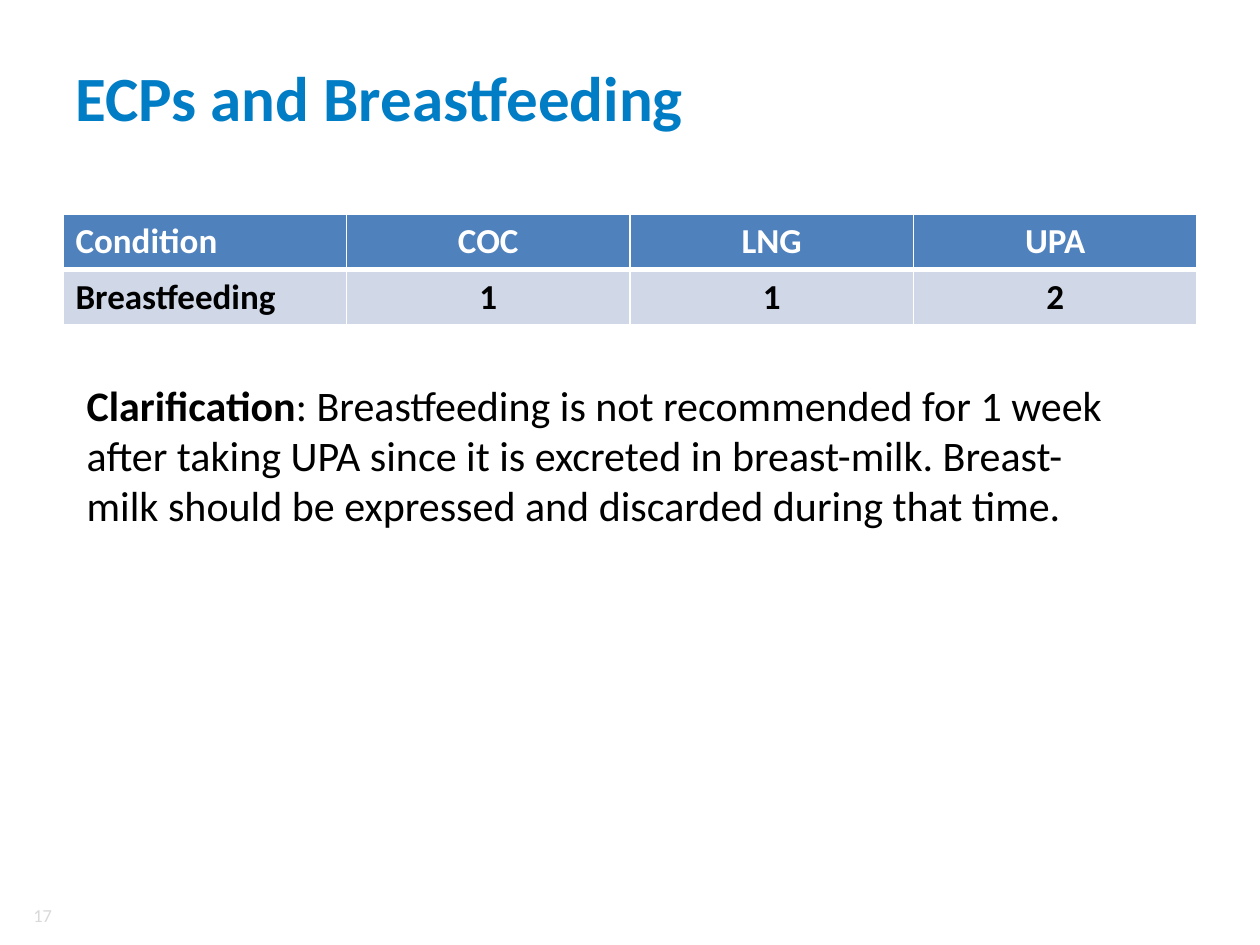
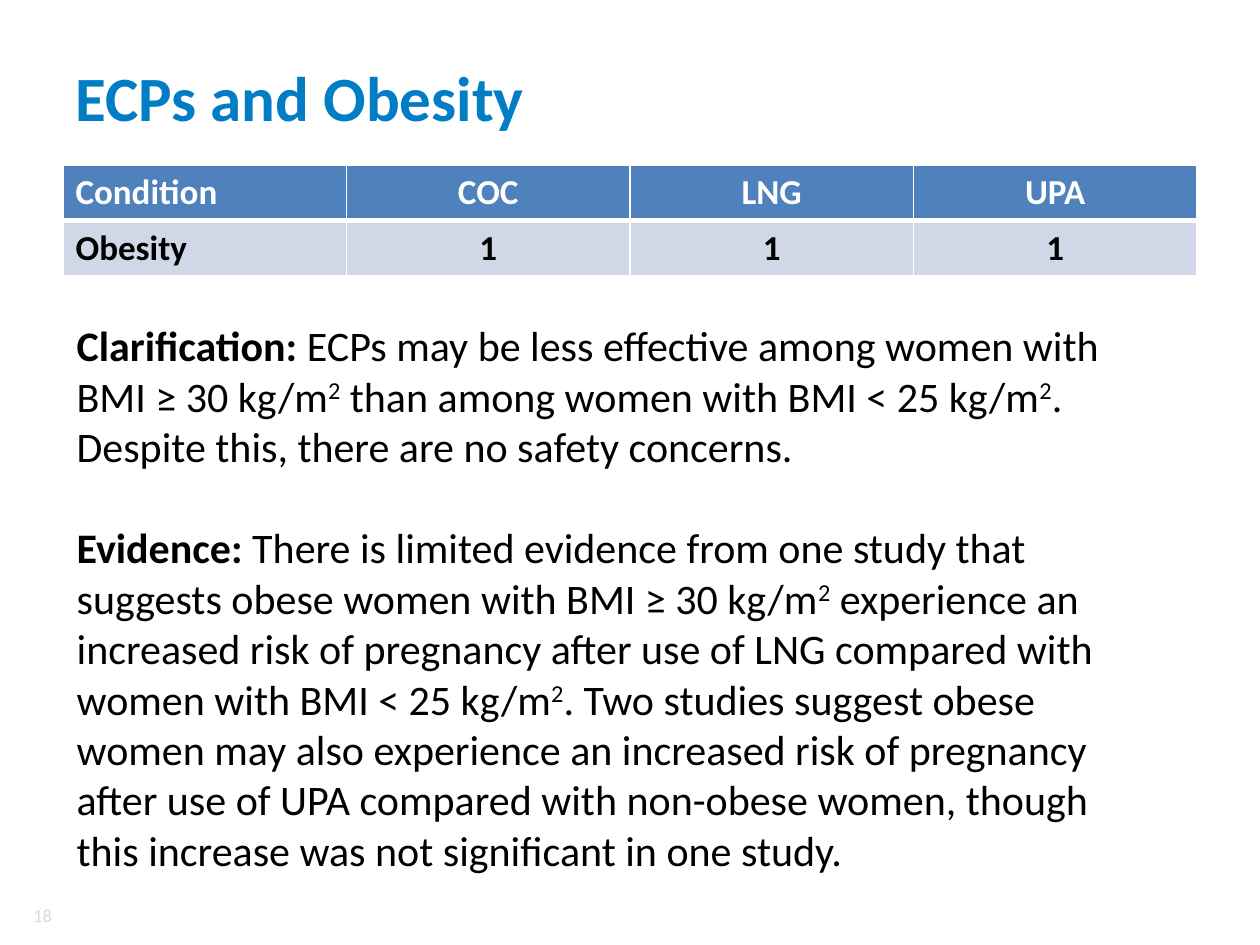
from dataclasses import dataclass
from typing import NamedTuple

import lxml.etree
import pptx
import pptx.dml.color
import pptx.enum.text
import pptx.oxml.ns
import pptx.util

EMU_PER_PX = 9144  # 100 px to the inch
FONT = "Calibri"
BLUE, HEADER, BAND = "007DC5", "4F81BD", "D0D8E8"
WHITE, BLACK, GREY = "FFFFFF", "000000", "D9D9D9"
LEFT = pptx.enum.text.PP_ALIGN.LEFT
CENTER = pptx.enum.text.PP_ALIGN.CENTER
RIGHT = pptx.enum.text.PP_ALIGN.RIGHT
MIDDLE = pptx.enum.text.MSO_ANCHOR.MIDDLE
COLUMNS = ("Condition", "COC", "LNG", "UPA")


class Box(NamedTuple):
    left: int
    top: int
    width: int
    height: int


class Remark(NamedTuple):
    lead: str
    body: str


@dataclass
class ConditionSlide:
    number: int
    title: str
    table_top: int
    condition: str
    categories: tuple[str, ...]
    remark_box: Box
    remarks: tuple[Remark, ...]


TITLE_BOX = Box(50, 30, 900, 93)
NUMBER_BOX = Box(12, 714, 39, 24)

SLIDES = (
    ConditionSlide(
        17, "ECPs and Breastfeeding", 170, "Breastfeeding", ("1", "1", "2"),
        Box(59, 296, 843, 131),
        (Remark("Clarification", ": Breastfeeding is not recommended for 1 week after taking UPA "
                "since it is excreted in breast-milk. Breast-milk should be expressed and "
                "discarded during that time."),)),
    ConditionSlide(
        18, "ECPs and Obesity", 131, "Obesity", ("1", "1", "1"),
        Box(51, 249, 858, 454),
        (Remark("Clarification: ", "ECPs may be less effective among women with BMI ≥ 30 kg/m² "
                "than among women with BMI < 25 kg/m². Despite this, there are no safety "
                "concerns."),
         Remark("Evidence: ", "There is limited evidence from one study that suggests obese women "
                "with BMI ≥ 30 kg/m² experience an increased risk of pregnancy after use of LNG "
                "compared with women with BMI < 25 kg/m². Two studies suggest obese women may "
                "also experience an increased risk of pregnancy after use of UPA compared with "
                "non-obese women, though this increase was not significant in one study."))),
)


def px(n: int) -> pptx.util.Emu:
    return pptx.util.Emu(n * EMU_PER_PX)


def rgb(color: str) -> pptx.dml.color.RGBColor:
    return pptx.dml.color.RGBColor.from_string(color)


def add_text(p, text: str, *, size: float, color: str = BLACK, bold: bool = False,
             align=LEFT, superscript: bool = False) -> None:
    p.alignment = align
    r = p.add_run()
    r.text = text
    r.font.name, r.font.size, r.font.bold = FONT, pptx.util.Pt(size), bold
    r.font.color.rgb = rgb(color)
    if superscript:
        r._r.get_or_add_rPr().set("baseline", "30000")


def add_box(s, box: Box):
    tf = s.shapes.add_textbox(*map(px, box)).text_frame
    tf.word_wrap = True
    return tf


def add_title(s, text: str) -> None:
    sp = s.shapes.title
    sp.left, sp.top, sp.width, sp.height = map(px, TITLE_BOX)
    tf = sp.text_frame
    tf.auto_size = pptx.enum.text.MSO_AUTO_SIZE.NONE
    tf.vertical_anchor = MIDDLE
    add_text(tf.paragraphs[0], text, size=36, color=BLUE, bold=True)


def add_number(s, number: int) -> None:
    tf = add_box(s, NUMBER_BOX)
    tf.vertical_anchor = MIDDLE
    add_text(tf.paragraphs[0], str(number), size=10.5, color=GREY, align=RIGHT)


def set_borders(cell, **widths: int) -> None:
    """Draw white borders; each keyword is a side (L, R, T, B) with its width in points."""
    qn = pptx.oxml.ns.qn
    tc_pr = cell._tc.get_or_add_tcPr()
    for side, width in widths.items():
        ln = lxml.etree.SubElement(tc_pr, qn(f"a:ln{side}"), w=str(pptx.util.Pt(width)))
        fill = lxml.etree.SubElement(ln, qn("a:solidFill"))
        lxml.etree.SubElement(fill, qn("a:srgbClr"), val=WHITE)


def add_condition_table(s, top: int, rows: tuple[tuple[str, ...], ...]) -> None:
    box = Box(50, top, 900, 87)
    table = s.shapes.add_table(len(rows), len(COLUMNS), *map(px, box)).table
    table.horz_banding = False
    for i, row in enumerate(rows):
        is_header = i == 0
        for j, text in enumerate(row):
            cell = table.cell(i, j)
            set_borders(cell, L=1, R=1, T=1 if is_header else 3, B=3 if is_header else 1)
            cell.fill.solid()
            cell.fill.fore_color.rgb = rgb(HEADER if is_header else BAND)
            add_text(cell.text_frame.paragraphs[0], text, size=20, bold=True,
                     color=WHITE if is_header else BLACK, align=CENTER if j else LEFT)


def add_remarks(s, box: Box, remarks: tuple[Remark, ...]) -> None:
    """Write each remark with a bold lead, raising every ² in its body."""
    tf = add_box(s, box)
    for i, remark in enumerate(remarks):
        p = tf.add_paragraph() if i else tf.paragraphs[0]
        if i:
            p.space_before = pptx.util.Pt(29)
        add_text(p, remark.lead, size=24, bold=True)
        for j, part in enumerate(remark.body.split("²")):
            if j:
                add_text(p, "2", size=24, superscript=True)
            add_text(p, part, size=24)


def main() -> None:
    prs = pptx.Presentation()
    prs.slide_width, prs.slide_height = px(1000), px(750)
    title_only = prs.slide_layouts.get_by_name("Title Only")
    for item in SLIDES:
        s = prs.slides.add_slide(title_only)
        add_title(s, item.title)
        add_condition_table(s, item.table_top, (COLUMNS, (item.condition, *item.categories)))
        add_remarks(s, item.remark_box, item.remarks)
        add_number(s, item.number)
    prs.save("out.pptx")


if __name__ == "__main__":
    main()
